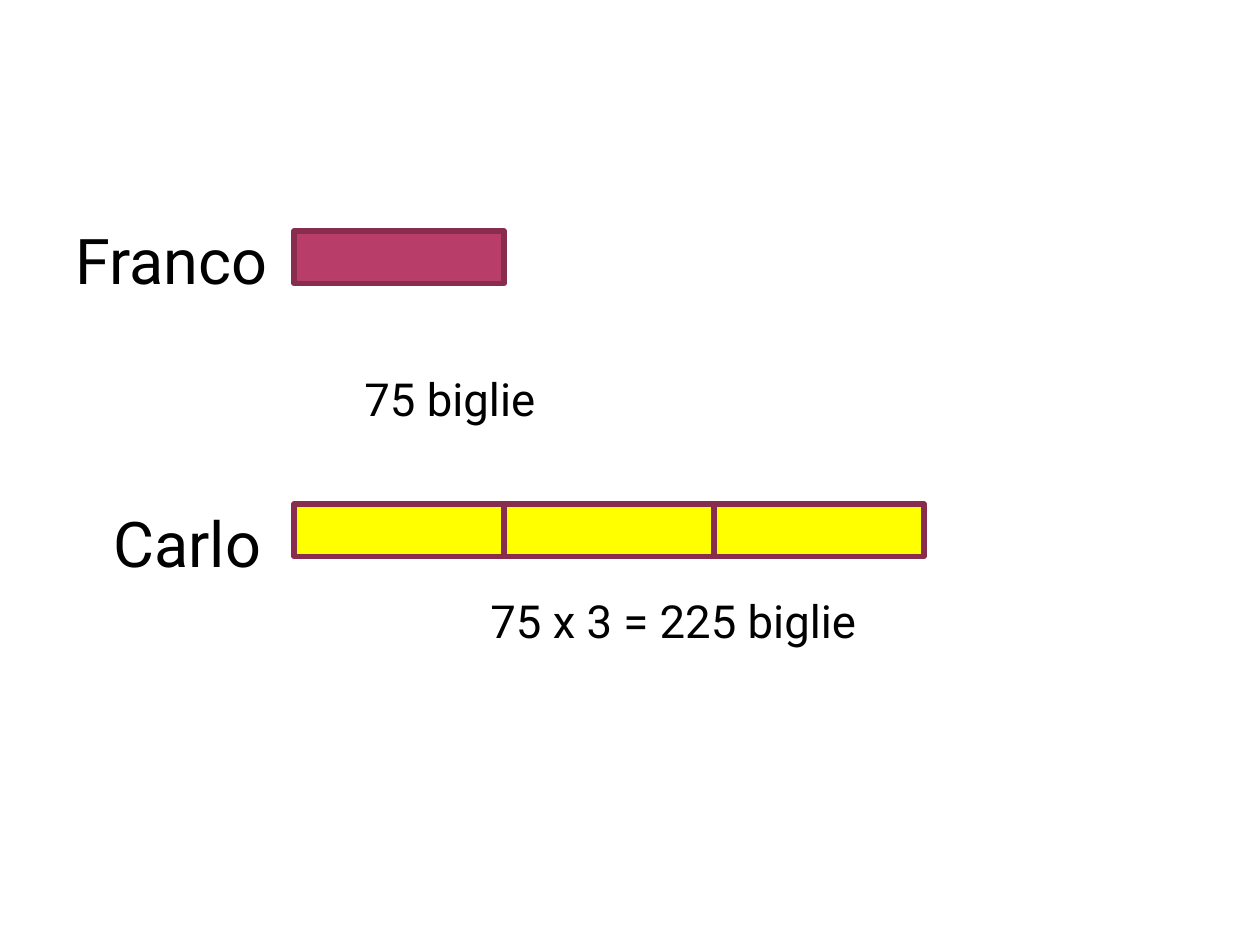
import pptx
import pptx.dml.color
import pptx.enum.shapes
import pptx.enum.text
import pptx.util
from lxml import etree
from pptx.oxml.ns import qn

Pt = pptx.util.Pt

# text, size, left indent, space before
LINES = [
    ("Franco", 36, 0, 0),
    ("75 biglie", 26, 165, 42.5),
    ("Carlo", 36, 21.6, 45),
    ("75 x 3 = 225 biglie", 26, 237, 7),
]
# top, number of units, fill
BARS = [
    (132, 1, "B83D68"),
    (288, 3, "FFFF00"),
]
BAR_LEFT, UNIT_WIDTH, UNIT_HEIGHT = 168, 120, 30
BORDER = "882D4D"
FONT = "Roboto"


def color(value):
    return pptx.dml.color.RGBColor.from_string(value)


def fill_body(body):
    body.left, body.top, body.width, body.height = Pt(36), Pt(123), Pt(570), Pt(385)
    frame = body.text_frame
    frame.word_wrap = True
    frame.auto_size = pptx.enum.text.MSO_AUTO_SIZE.NONE
    frame.vertical_anchor = pptx.enum.text.MSO_ANCHOR.TOP
    for index, (text, size, indent, space) in enumerate(LINES):
        paragraph = frame.paragraphs[0] if index == 0 else frame.add_paragraph()
        properties = paragraph._p.get_or_add_pPr()
        properties.set("marL", str(Pt(indent)))
        properties.set("indent", "0")
        etree.SubElement(properties, qn("a:buNone"))
        paragraph.space_before = Pt(space)
        run = paragraph.add_run()
        run.text = text
        run.font.name = FONT
        run.font.size = Pt(size)
        run.font.color.rgb = color("000000")


def add_bar(slide, top, units, fill):
    for unit in range(units):
        shape = slide.shapes.add_shape(
            pptx.enum.shapes.MSO_SHAPE.RECTANGLE,
            Pt(BAR_LEFT + unit * UNIT_WIDTH), Pt(top), Pt(UNIT_WIDTH), Pt(UNIT_HEIGHT))
        shape.shadow.inherit = False
        shape.fill.solid()
        shape.fill.fore_color.rgb = color(fill)
        shape.line.color.rgb = color(BORDER)
        shape.line.width = Pt(3.15)


def main():
    presentation = pptx.Presentation()
    presentation.slide_width, presentation.slide_height = Pt(720), Pt(540)
    slide = presentation.slides.add_slide(presentation.slide_layouts[1])
    title = slide.shapes.title
    title.element.getparent().remove(title.element)
    fill_body(slide.placeholders[1])
    for top, units, fill in BARS:
        add_bar(slide, top, units, fill)
    presentation.save("out.pptx")


if __name__ == "__main__":
    main()
